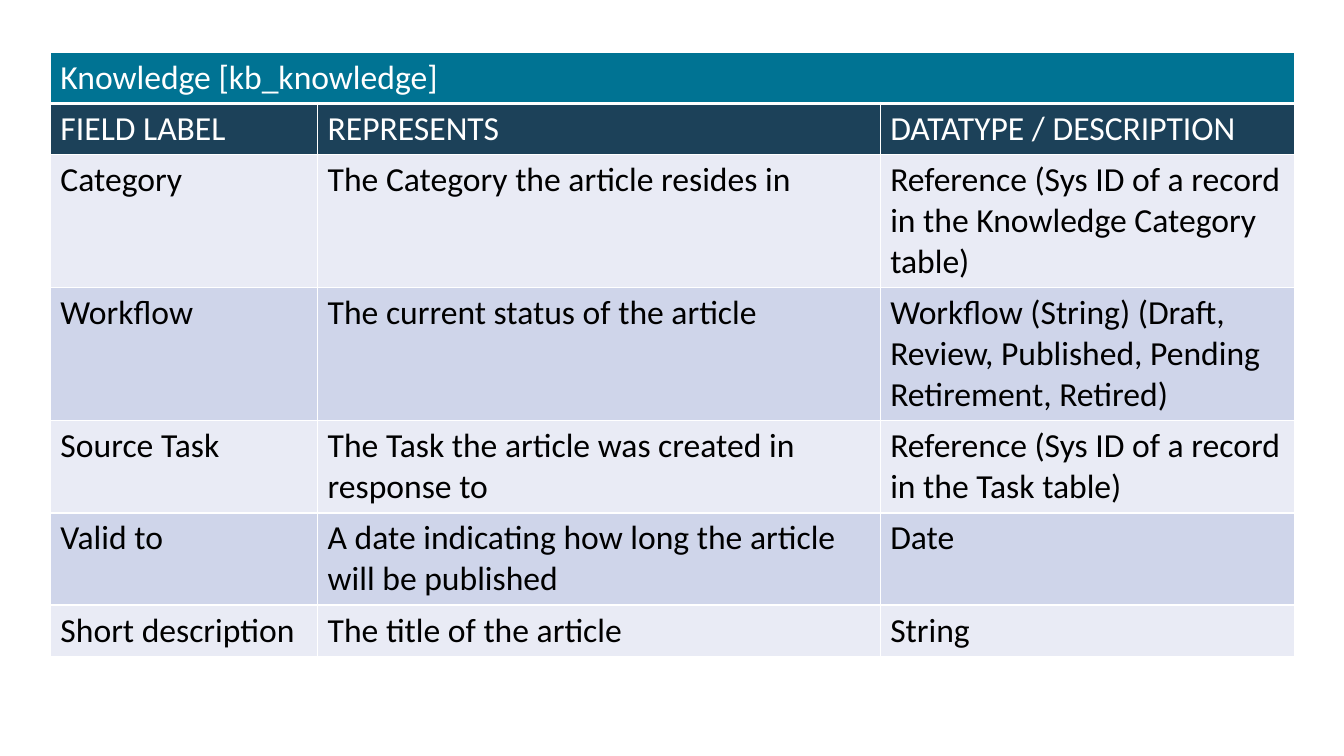
from dataclasses import dataclass

from lxml.etree import SubElement
from pptx import Presentation
from pptx.dml.color import RGBColor
from pptx.oxml.ns import qn
from pptx.table import _Cell
from pptx.util import Emu, Inches, Pt


@dataclass(frozen=True)
class Theme:
    font: str = "Calibri"
    text_size: int = 24
    title_fill: str = "007393"
    heading_fill: str = "1C4159"
    bands: tuple[str, str] = ("E9EBF5", "CFD5EA")
    light_text: str = "FFFFFF"
    dark_text: str = "000000"
    border: str = "FFFFFF"
    thin: int = 1
    thick: int = 3


@dataclass(frozen=True)
class FieldRow:
    label: str
    represents: str
    datatype: str
    lines: int = 1


THEME = Theme()
GRID_COLUMNS, GRID_ROWS = 1333, 750
SLIDE_WIDTH, SLIDE_HEIGHT = Inches(13.33), Inches(7.5)
TABLE_LEFT, TABLE_TOP = 50, 52
FIELD_COLUMNS = (265, 558, 411)
LINE_ROWS, PADDING_ROWS = 40, 10

TITLE = FieldRow("Knowledge [kb_knowledge]", "", "")
HEADINGS = FieldRow("FIELD LABEL", "REPRESENTS", "DATATYPE / DESCRIPTION")
FIELDS = (
    FieldRow("Category", "The Category the article resides in",
             "Reference (Sys ID of a record in the Knowledge Category table)", 3),
    FieldRow("Workflow", "The current status of the article",
             "Workflow (String) (Draft, Review, Published, Pending Retirement, Retired)", 3),
    FieldRow("Source Task", "The Task the article was created in response to",
             "Reference (Sys ID of a record in the Task table)", 2),
    FieldRow("Valid to", "A date indicating how long the article will be published", "Date", 2),
    FieldRow("Short description", "The title of the article", "String"),
)


def across(columns: int) -> Emu:
    return Emu(SLIDE_WIDTH * columns // GRID_COLUMNS)


def down(rows: int) -> Emu:
    return Emu(SLIDE_HEIGHT * rows // GRID_ROWS)


def row_height(field: FieldRow) -> int:
    return field.lines * LINE_ROWS + PADDING_ROWS


def add_borders(cell: _Cell, top: int, bottom: int) -> None:
    properties = cell._tc.get_or_add_tcPr()
    widths = {"a:lnL": THEME.thin, "a:lnR": THEME.thin, "a:lnT": top, "a:lnB": bottom}
    for side, width in widths.items():
        line = SubElement(properties, qn(side), w=str(Pt(width)))
        SubElement(SubElement(line, qn("a:solidFill")), qn("a:srgbClr"), val=THEME.border)


def fill_cell(cell: _Cell, wording: str, background: str, text_color: str) -> None:
    cell.fill.solid()
    cell.fill.fore_color.rgb = RGBColor.from_string(background)
    cell.text_frame.text = wording
    for run in cell.text_frame.paragraphs[0].runs:
        run.font.name = THEME.font
        run.font.size = Pt(THEME.text_size)
        run.font.bold = False
        run.font.color.rgb = RGBColor.from_string(text_color)


def row_colors(index: int) -> tuple[str, str]:
    if index == 0:
        return THEME.title_fill, THEME.light_text
    if index == 1:
        return THEME.heading_fill, THEME.light_text
    return THEME.bands[index % 2], THEME.dark_text


def main() -> None:
    presentation = Presentation()
    presentation.slide_width, presentation.slide_height = SLIDE_WIDTH, SLIDE_HEIGHT
    slide = presentation.slides.add_slide(presentation.slide_layouts[6])

    entries = (TITLE, HEADINGS, *FIELDS)
    knowledge = slide.shapes.add_table(
        len(entries), len(FIELD_COLUMNS), across(TABLE_LEFT), down(TABLE_TOP),
        across(sum(FIELD_COLUMNS)), down(sum(map(row_height, entries))),
    ).table
    for column, width in zip(knowledge.columns, FIELD_COLUMNS):
        column.width = across(width)

    for index, entry in enumerate(entries):
        knowledge.rows[index].height = down(row_height(entry))
        top = THEME.thick if index == 1 else THEME.thin
        bottom = THEME.thick if index == 0 else THEME.thin
        for position, wording in enumerate((entry.label, entry.represents, entry.datatype)):
            cell = knowledge.cell(index, position)
            add_borders(cell, top, bottom)
            fill_cell(cell, wording, *row_colors(index))
    knowledge.cell(0, 0).merge(knowledge.cell(0, len(FIELD_COLUMNS) - 1))

    presentation.save("out.pptx")


if __name__ == "__main__":
    main()
